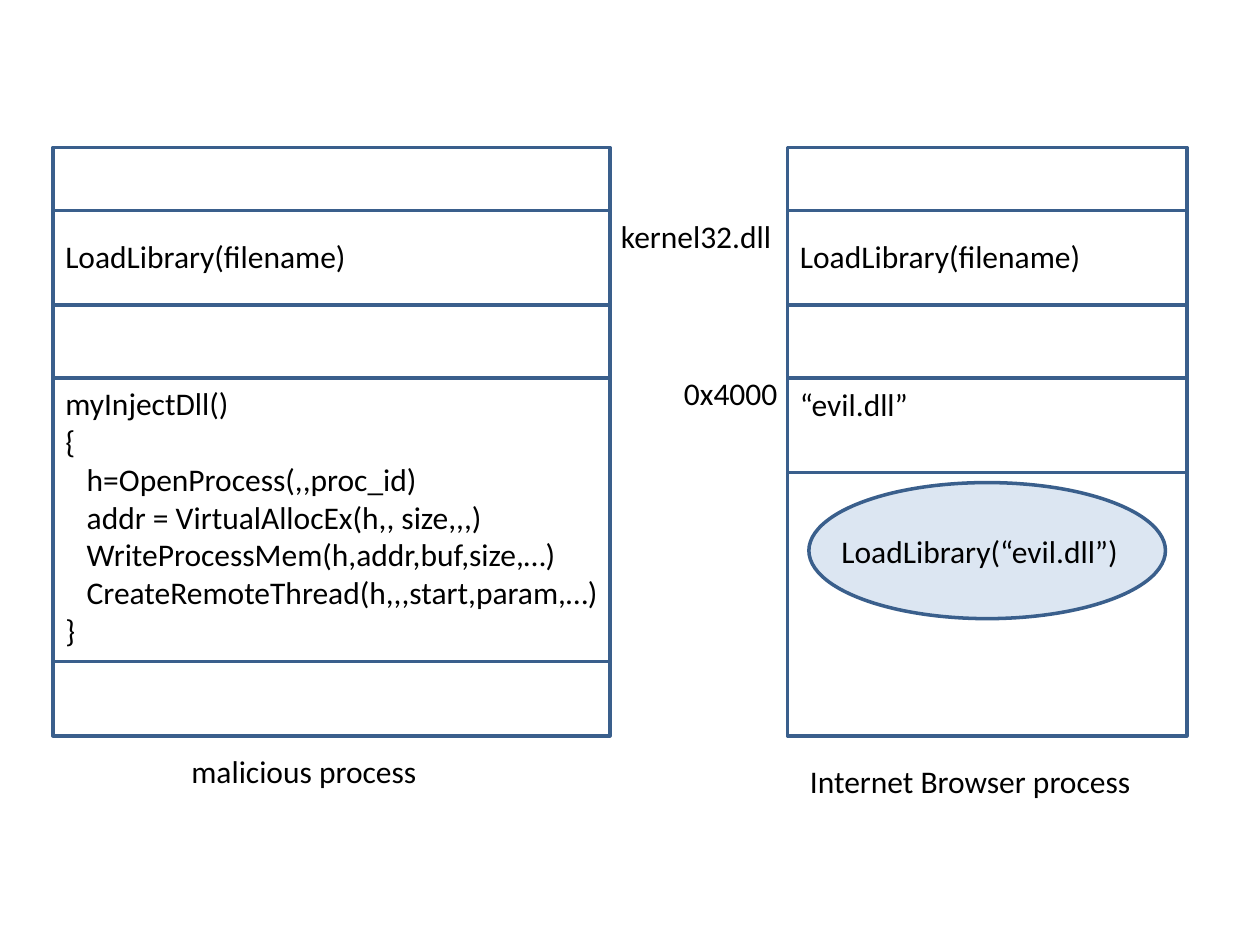
from pptx import Presentation
from pptx.dml.color import RGBColor
from pptx.enum.shapes import MSO_SHAPE as Shape
from pptx.enum.text import MSO_AUTO_SIZE as AutoSize
from pptx.util import Inches, Pt

BLACK = RGBColor(0x00, 0x00, 0x00)
OUTLINE = RGBColor(0x3A, 0x5F, 0x8C)
THREAD_FILL = RGBColor(0xDC, 0xE6, 0xF2)

# Address spaces: left, width, and (top, height) of each mapped region
MEMORY_TOP, MEMORY_HEIGHT = 1.17, 4.67
KERNEL_REGION = (1.67, 0.75)
MALICIOUS = (0.42, 4.42, [(3, 2.25), KERNEL_REGION])
TARGET = (6.25, 3.17, [KERNEL_REGION, (3, 0.75)])
REMOTE_THREAD = (6.58 - 0.16, 3.83, 2.83, 1.08)

# Labels: text, left, top, width
LOAD_LIBRARY = "LoadLibrary(filename)"
MALICIOUS_LABEL = (LOAD_LIBRARY, 0.42, 1.83, 3.1)
LABELS = [
    ("malicious process", 1.42, 5.92, 2.58),
    ("Internet Browser process", 6.33, 6, 2.83),
    (LOAD_LIBRARY, 6.25, 1.83, 2.75),
    ("kernel32.dll", 4.83, 1.67, 2.08),
    ("0x4000", 5.33, 2.92, 1.08),
    ("“evil.dll”", 6.25, 3.01, 2),
    ("LoadLibrary(“evil.dll”)", 6.58, 4.17, 3),
]

# Injection code: (indented, line)
CODE = [
    (False, "myInjectDll()"),
    (False, "{"),
    (True, "h=OpenProcess(,,proc_id)"),
    (True, "addr = VirtualAllocEx(h,, size,,,)"),
    (True, "WriteProcessMem(h,addr,buf,size,…)"),
    (True, "CreateRemoteThread(h,,,start,param,…)"),
    (False, "}"),
]
CODE_INDENT = Inches(0.17)


def add_outline(shapes, kind, left, top, width, height, fill=None):
    outline = shapes.add_shape(kind, *map(Inches, (left, top, width, height)))
    outline.shadow.inherit = False
    outline.line.color.rgb = OUTLINE
    outline.line.width = Pt(2)
    if fill is None:
        outline.fill.background()
    else:
        outline.fill.solid()
        outline.fill.fore_color.rgb = fill


def add_process(shapes, left, width, regions):
    for top, height in [(MEMORY_TOP, MEMORY_HEIGHT), *regions]:
        add_outline(shapes, Shape.RECTANGLE, left, top, width, height)


def add_label(shapes, text, left, top, width, height=0.4):
    label = shapes.add_textbox(*map(Inches, (left, top, width, height)))
    frame = label.text_frame
    frame.word_wrap = True
    frame.auto_size = AutoSize.SHAPE_TO_FIT_TEXT
    frame.text = text
    for paragraph in frame.paragraphs:
        paragraph.font.name = "Calibri"
        paragraph.font.size = Pt(18)
        paragraph.font.color.rgb = BLACK
    return frame


prs = Presentation()
prs.slide_width, prs.slide_height = Inches(10), Inches(7.5)
slide = prs.slides.add_slide(prs.slide_layouts[6])

# Target process and its remote thread
add_outline(slide.shapes, Shape.OVAL, *REMOTE_THREAD, fill=THREAD_FILL)
add_process(slide.shapes, *TARGET)

# Malicious process, grouped with its library label
malicious_group = slide.shapes.add_group_shape()
add_process(malicious_group.shapes, *MALICIOUS)
add_label(malicious_group.shapes, *MALICIOUS_LABEL)

# Injection code
code_text = "\n".join(line for _, line in CODE)
code_frame = add_label(slide.shapes, code_text, 0.42, 3, 4.67, 2.22)
for paragraph, (indented, _) in zip(code_frame.paragraphs, CODE):
    if indented:
        paragraph._p.get_or_add_pPr().set("marL", str(CODE_INDENT))

# Captions and addresses
for label in LABELS:
    add_label(slide.shapes, *label)

prs.save("out.pptx")
